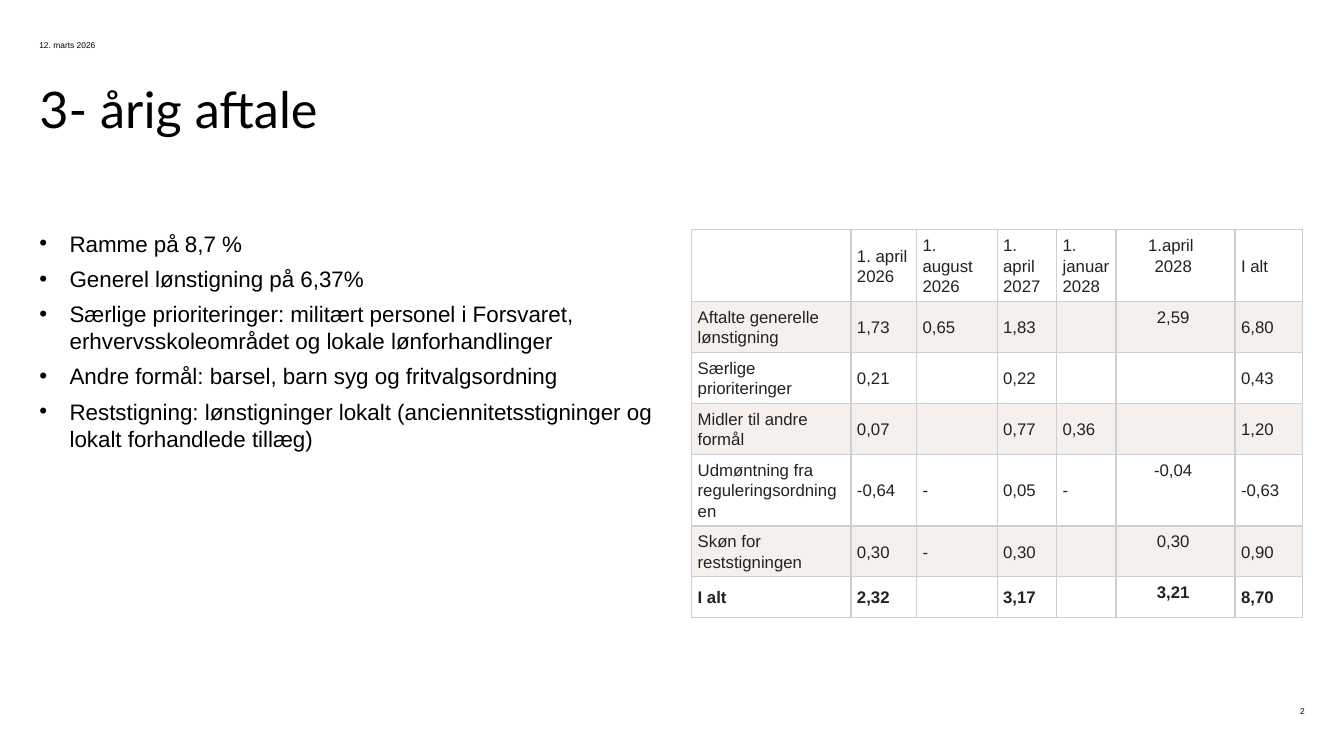
from lxml import etree
from pptx import Presentation
from pptx.dml.color import RGBColor as Rgb
from pptx.enum.text import MSO_ANCHOR as Anchor, PP_ALIGN as Align
from pptx.oxml.ns import qn
from pptx.util import Pt

PX = 9144  # 100 px to the inch
NBSP = chr(160)

BLACK, INK, WHITE, SAND, EDGE = "000000", "222222", "FFFFFF", "F5F0EB", "CAD1D5"

POINTS = [
    "Ramme på 8,7 %",
    "Generel lønstigning på 6,37%",
    "Særlige prioriteringer: militært personel i Forsvaret, erhvervsskoleområdet og lokale lønforhandlinger",
    "Andre formål: barsel, barn syg og fritvalgsordning",
    "Reststigning: lønstigninger lokalt (anciennitetsstigninger og lokalt forhandlede tillæg)",
]

COLS = [158, 65, 80, 59, 59, 118, 67]
ROWS = [71, 50, 50, 50, 71, 50, 30]
MID = 5  # the centred column
RAISES = [
    ["", "1. april 2026", "1. august 2026", "1. april 2027", "1. januar 2028",
     f"1.april{NBSP * 2}\v2028", "I alt"],
    ["Aftalte generelle lønstigning", "1,73", "0,65", "1,83", "", "2,59", "6,80"],
    ["Særlige prioriteringer", "0,21", "", "0,22", "", "", "0,43"],
    ["Midler til andre formål", "0,07", "", "0,77", "0,36", "", "1,20"],
    ["Udmøntning fra reguleringsordningen", "-0,64", "-", "0,05", "-", "-0,04", "-0,63"],
    ["Skøn for reststigningen", "0,30", "-", "0,30", "", "0,30", "0,90"],
    ["I alt", "2,32", "", "3,17", "", "3,21", "8,70"],
]


def paint(code):
    return Rgb.from_string(code)


def apply(item, form):
    for name, value in form.items():
        setattr(item, name, value)


class Page:
    def __init__(self, deck, font):
        self.slide = deck.slides.add_slide(deck.slide_layouts[6])
        self.font = font

    def style(self, run, size, color, **more):
        apply(run.font, {"name": self.font, "size": Pt(size), **more})
        run.font.color.rgb = paint(color)

    def text(self, box, lines, size, para=None, bullet=False,
             anchor=Anchor.TOP, **more):
        shape = self.slide.shapes.add_textbox(*[n * PX for n in box])
        frame = shape.text_frame
        apply(frame, {"word_wrap": True, "vertical_anchor": anchor,
                      "margin_left": 0, "margin_right": 0,
                      "margin_top": 0, "margin_bottom": 0})
        for i, line in enumerate(lines):
            p = frame.paragraphs[0] if i == 0 else frame.add_paragraph()
            if bullet:
                self.bullet(p)
            apply(p, para or {})
            if bullet and i:
                p.space_before = Pt(3)
            run = p.add_run()
            run.text = line
            self.style(run, size, BLACK, **more)

    def bullet(self, p):
        props = p._p.get_or_add_pPr()
        props.set("marL", str(30 * PX))
        props.set("indent", str(-30 * PX))
        font = etree.SubElement(props, qn("a:buFont"))
        font.set("typeface", self.font)
        etree.SubElement(props, qn("a:buChar")).set("char", "•")

    def border(self, cell, last):
        props = cell._tc.get_or_add_tcPr()
        for i, side in enumerate(("lnL", "lnR", "lnT", "lnB")):
            line = etree.Element(qn(f"a:{side}"))
            width = 0.75 if last and side == "lnB" else 1
            line.set("w", str(int(Pt(width))))
            fill = etree.SubElement(line, qn("a:solidFill"))
            etree.SubElement(fill, qn("a:srgbClr")).set("val", EDGE)
            props.insert(i, line)

    def table(self, left, top, cols, rows, data):
        box = [n * PX for n in (left, top, sum(cols), sum(rows))]
        grid = self.slide.shapes.add_table(len(rows), len(cols), *box).table
        apply(grid, {"first_row": False, "horz_banding": False})
        for col, width in zip(grid.columns, cols):
            col.width = width * PX
        for r, (row, high) in enumerate(zip(grid.rows, rows)):
            row.height = high * PX
            for c, cell in enumerate(row.cells):
                self.cell(cell, data[r][c], r, c == MID, r == len(rows) - 1)

    def cell(self, cell, words, row, mid, last):
        apply(cell, {"margin_left": 6 * PX, "margin_right": 6 * PX,
                     "margin_top": 5 * PX, "margin_bottom": 5 * PX,
                     "vertical_anchor": Anchor.TOP if mid else Anchor.MIDDLE})
        cell.fill.solid()
        cell.fill.fore_color.rgb = paint(SAND if row % 2 else WHITE)
        self.border(cell, last)
        p = cell.text_frame.paragraphs[0]
        if words:
            p.text = words + NBSP
        apply(p, {"line_spacing": Pt(14.6),
                  "alignment": Align.CENTER if mid else Align.LEFT})
        for run in p.runs:
            self.style(run, 12, INK, bold=last)


def main():
    deck = Presentation()
    apply(deck, {"slide_width": 1333 * PX, "slide_height": 750 * PX})
    page = Page(deck, "Arial")

    # Title and bullet points
    page.text((39, 88, 1255, 139), ["3- årig aftale"], 36,
              {"line_spacing": 0.83}, name="Lato")
    page.text((39, 228, 608, 242), POINTS, 16, {"space_after": Pt(3)}, bullet=True)

    # Pay rises by date
    page.table(686, 228, COLS, ROWS, RAISES)

    # Date and page number
    page.text((39, 39, 108, 12), ["12. marts 2026"], 6, anchor=Anchor.MIDDLE)
    page.text((1256, 699, 38, 12), ["2"], 6, {"alignment": Align.RIGHT},
              anchor=Anchor.MIDDLE)

    deck.save("out.pptx")


if __name__ == "__main__":
    main()
